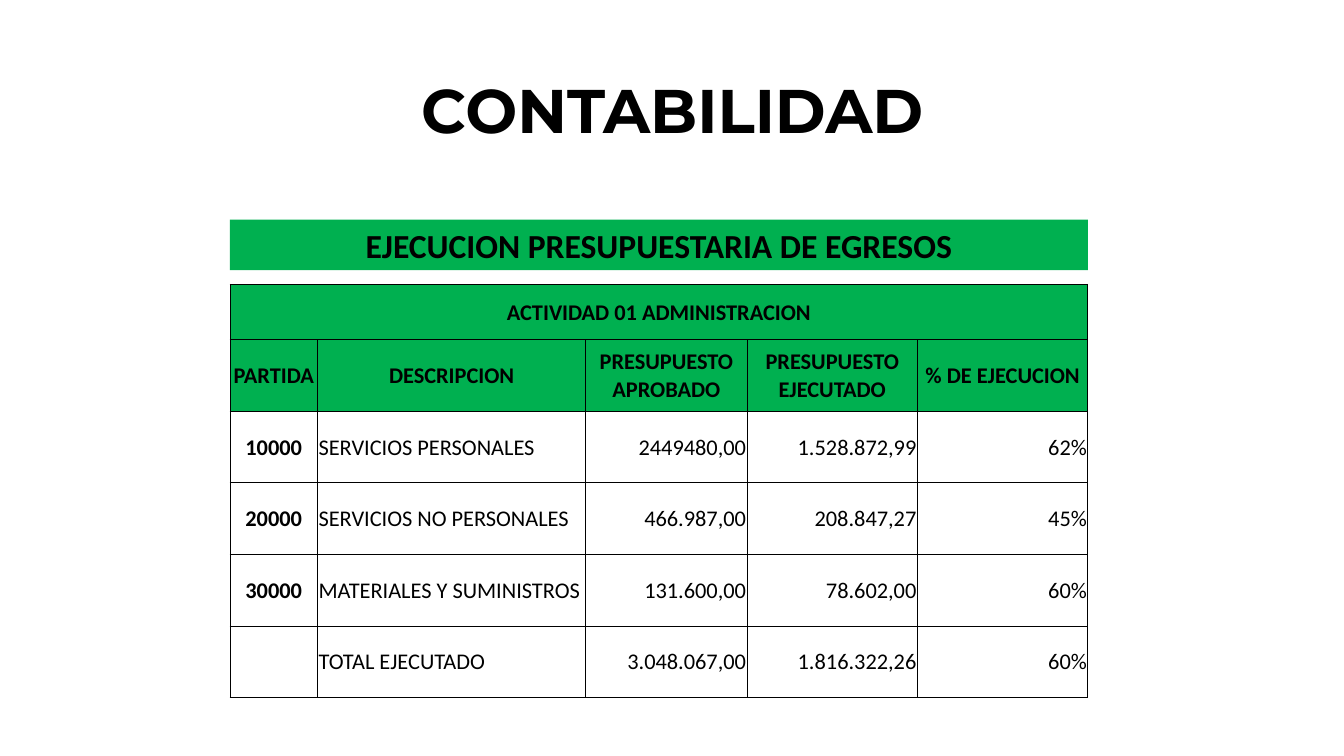
from dataclasses import dataclass

from lxml import etree
from pptx import Presentation
from pptx import util as u
from pptx.dml.color import RGBColor
from pptx.enum import shapes, text
from pptx.oxml import ns


@dataclass(frozen=True)
class Theme:
    ink: str = "000000"
    green: str = "00B050"
    title_font: str = "Montserrat"
    body_font: str = "Calibri"
    title_size: int = 44
    band_size: int = 24
    cell_size: int = 16
    border_width: float = 0.5


LEFT, CENTER, RIGHT = text.PP_ALIGN.LEFT, text.PP_ALIGN.CENTER, text.PP_ALIGN.RIGHT
MIDDLE = text.MSO_ANCHOR.MIDDLE


class SlideBuilder:
    def __init__(self, slide, theme):
        self.slide = slide
        self.theme = theme

    def add_wording(self, frame, wording, size, font, bold=True, align=CENTER):
        paragraph = frame.paragraphs[0]
        paragraph.alignment = align
        run = paragraph.add_run()
        run.text = wording
        run.font.size = u.Pt(size)
        run.font.name = font
        run.font.bold = bold
        run.font.color.rgb = RGBColor.from_string(self.theme.ink)
        return paragraph

    def paint(self, fill):
        fill.solid()
        fill.fore_color.rgb = RGBColor.from_string(self.theme.green)

    def title(self, wording, box):
        frame = self.slide.shapes.add_textbox(*map(u.Inches, box)).text_frame
        frame.word_wrap = True
        frame.vertical_anchor = MIDDLE
        heading = self.add_wording(frame, wording, self.theme.title_size, self.theme.title_font)
        heading.line_spacing = 0.9

    def band(self, wording, box):
        band = self.slide.shapes.add_shape(shapes.MSO_SHAPE.RECTANGLE, *map(u.Inches, box))
        band.shadow.inherit = False
        self.paint(band.fill)
        band.line.fill.background()
        band.text_frame.word_wrap = True
        band.text_frame.vertical_anchor = text.MSO_ANCHOR.TOP
        self.add_wording(band.text_frame, wording, self.theme.band_size, self.theme.body_font)

    def border(self, cell):
        # Border lines must come before the fill in the cell properties
        properties = cell._tc.get_or_add_tcPr()
        for position, side in enumerate(("lnL", "lnR", "lnT", "lnB")):
            line = etree.Element(ns.qn(f"a:{side}"), w=str(u.Pt(self.theme.border_width)))
            fill = etree.SubElement(line, ns.qn("a:solidFill"))
            etree.SubElement(fill, ns.qn("a:srgbClr"), val=self.theme.ink)
            properties.insert(position, line)

    def cell(self, cell, wording, header, bold, align):
        cell.margin_left = cell.margin_right = cell.margin_top = u.Inches(0.01)
        cell.margin_bottom = 0
        cell.vertical_anchor = MIDDLE
        if header:
            self.paint(cell.fill)
        else:
            cell.fill.background()
        self.border(cell)
        if wording:
            self.add_wording(cell.text_frame, wording, self.theme.cell_size,
                             self.theme.body_font, bold, align)

    def table(self, rows, header_rows, aligns, box, widths, heights):
        table = self.slide.shapes.add_table(len(rows), len(widths), *map(u.Inches, box)).table
        table.first_row = table.horz_banding = False
        for column, width in zip(table.columns, widths):
            column.width = u.Inches(width)
        for row, height in zip(table.rows, heights):
            row.height = u.Inches(height)
        for r, entries in enumerate(rows):
            header = r < header_rows
            for c, wording in enumerate(entries):
                self.cell(table.cell(r, c), wording, header, header or c == 0,
                          CENTER if header else aligns[c])
        table.cell(0, 0).merge(table.cell(0, len(widths) - 1))


BUDGET = [
    ("ACTIVIDAD 01 ADMINISTRACION", "", "", "", ""),
    ("PARTIDA", "DESCRIPCION", "PRESUPUESTO APROBADO", "PRESUPUESTO EJECUTADO", "% DE EJECUCION"),
    ("10000", "SERVICIOS PERSONALES", "2449480,00", "1.528.872,99", "62%"),
    ("20000", "SERVICIOS NO PERSONALES", "466.987,00", "208.847,27", "45%"),
    ("30000", "MATERIALES Y SUMINISTROS", "131.600,00", "78.602,00", "60%"),
    ("", "TOTAL EJECUTADO", "3.048.067,00", "1.816.322,26", "60%"),
]


def main():
    deck = Presentation()
    deck.slide_width, deck.slide_height = u.Inches(13.33), u.Inches(7.5)
    builder = SlideBuilder(deck.slides.add_slide(deck.slide_layouts[6]), Theme())
    left, width = 2.28, 8.51

    # Heading
    builder.title("CONTABILIDAD", (0.92, 0.4, 11.5, 1.45))

    # Budget table
    builder.table(BUDGET, 2, (CENTER, LEFT, RIGHT, RIGHT, RIGHT), (left, 2.82, width, 4.1),
                  (0.87, 2.66, 1.6, 1.69, 1.69), [0.55] + [0.71] * 5)

    # Band above the table
    builder.band("EJECUCION PRESUPUESTARIA DE EGRESOS", (left, 2.18, width, 0.5))

    deck.save("out.pptx")


if __name__ == "__main__":
    main()
